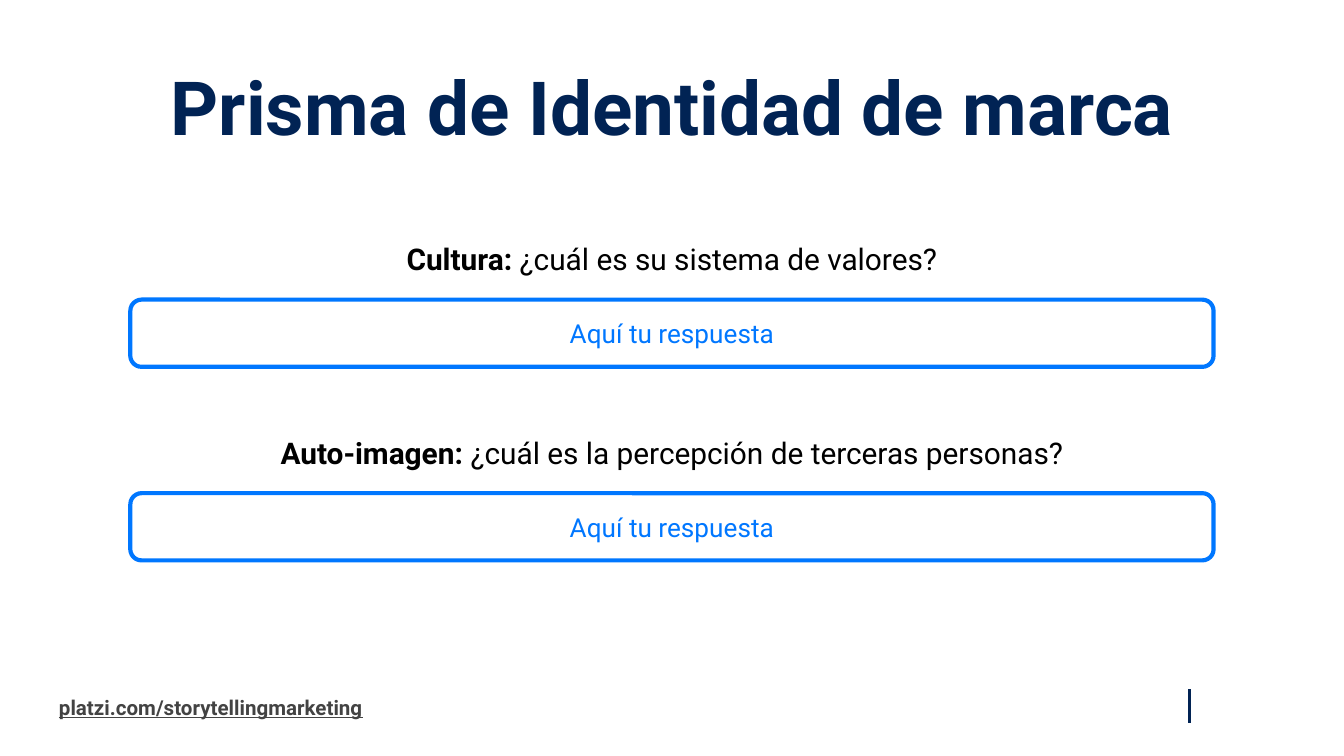
"""Build the brand identity prism slide with two questions and answer boxes."""
from lxml import etree
from pptx import Presentation
from pptx.dml.color import RGBColor
from pptx.enum.shapes import MSO_CONNECTOR, MSO_SHAPE
from pptx.enum.text import MSO_ANCHOR, MSO_AUTO_SIZE, PP_ALIGN
from pptx.oxml.ns import qn
from pptx.util import Inches, Pt

CENTER, LEFT = PP_ALIGN.CENTER, PP_ALIGN.LEFT
MIDDLE, TOP = MSO_ANCHOR.MIDDLE, MSO_ANCHOR.TOP
FIXED = MSO_AUTO_SIZE.NONE
ROUND = MSO_SHAPE.ROUNDED_RECTANGLE
STRAIGHT = MSO_CONNECTOR.STRAIGHT
HUES = {"navy": "012354", "blue": "0077FF", "gray": "434343", "black": "000000"}
PAIRS = [
    ("Cultura: ", "¿cuál es su sistema de valores?"),
    ("Auto-imagen: ", "¿cuál es la percepción de terceras personas?"),
]


def place(shape, left, top, width, height):
    shape.left, shape.top = Inches(left), Inches(top)
    shape.width, shape.height = Inches(width), Inches(height)


def style(shape, size, hue, bold=None, align=CENTER, anchor=MIDDLE):
    frame = shape.text_frame
    frame.auto_size = FIXED
    frame.word_wrap = True
    frame.vertical_anchor = anchor
    frame.margin_left = frame.margin_right = Inches(0.1)
    frame.margin_top = frame.margin_bottom = Inches(0.1)
    para = frame.paragraphs[0]
    para.alignment = align
    para.space_before = Pt(0)
    font = para.font
    font.name, font.size, font.bold = "Roboto", Pt(size), bold
    font.color.rgb = RGBColor.from_string(HUES[hue])
    return para


deck = Presentation()
deck.slide_width = Inches(10)
deck.slide_height = Inches(10) * 9 // 16
slide = deck.slides.add_slide(deck.slide_layouts[3])
shapes = slide.shapes

link = shapes.add_textbox(Inches(0.34), Inches(5.09), Inches(3.11), Inches(0.34))
link.text_frame.text = "platzi.com/storytellingmarketing"
style(link, 11, "gray", True, LEFT).font.underline = True

mark = shapes.add_connector(STRAIGHT, Inches(8.85), Inches(5.13), Inches(8.85), Inches(5.38))
mark.line.color.rgb = RGBColor.from_string(HUES["navy"])
mark.line.width = Pt(1.5)
etree.SubElement(mark.element.spPr, qn("a:effectLst"))

title = shapes.title
place(title, 0.34, 0.48, 9.32, 0.63)
title.text_frame.text = "Prisma de Identidad de marca"
style(title, 40, "navy", True, anchor=TOP).line_spacing = 0.8

for row, (name, ask) in enumerate(PAIRS):
    top = 1.65 + row * 1.44
    body = slide.placeholders[row + 1]
    place(body, 1.32, top, 7.36, 0.55)
    para = body.text_frame.paragraphs[0]
    props = para._p.get_or_add_pPr()
    props.set("marL", "0")
    props.set("indent", "0")
    etree.SubElement(props, qn("a:buNone"))
    for text, bold in ((name, True), (ask, False)):
        run = para.add_run()
        run.text = text
        run.font.bold = bold
    style(body, 16, "black")

    box = shapes.add_shape(ROUND, Inches(0.97), Inches(top + 0.58), Inches(8.06), Inches(0.5))
    box.shadow.inherit = False
    box.fill.background()
    box.line.color.rgb = RGBColor.from_string(HUES["blue"])
    box.line.width = Pt(2.25)
    box.text_frame.text = "Aquí tu respuesta"
    style(box, 14, "blue")

deck.save("out.pptx")
